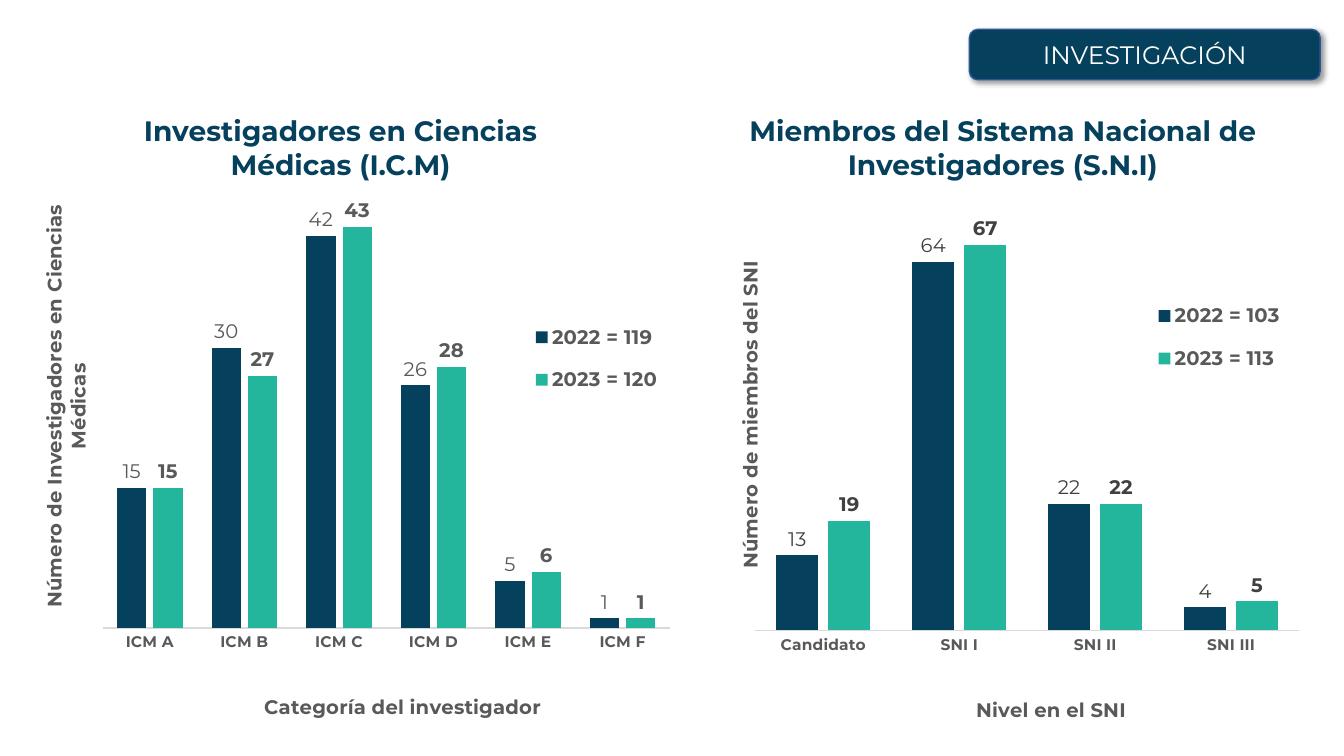
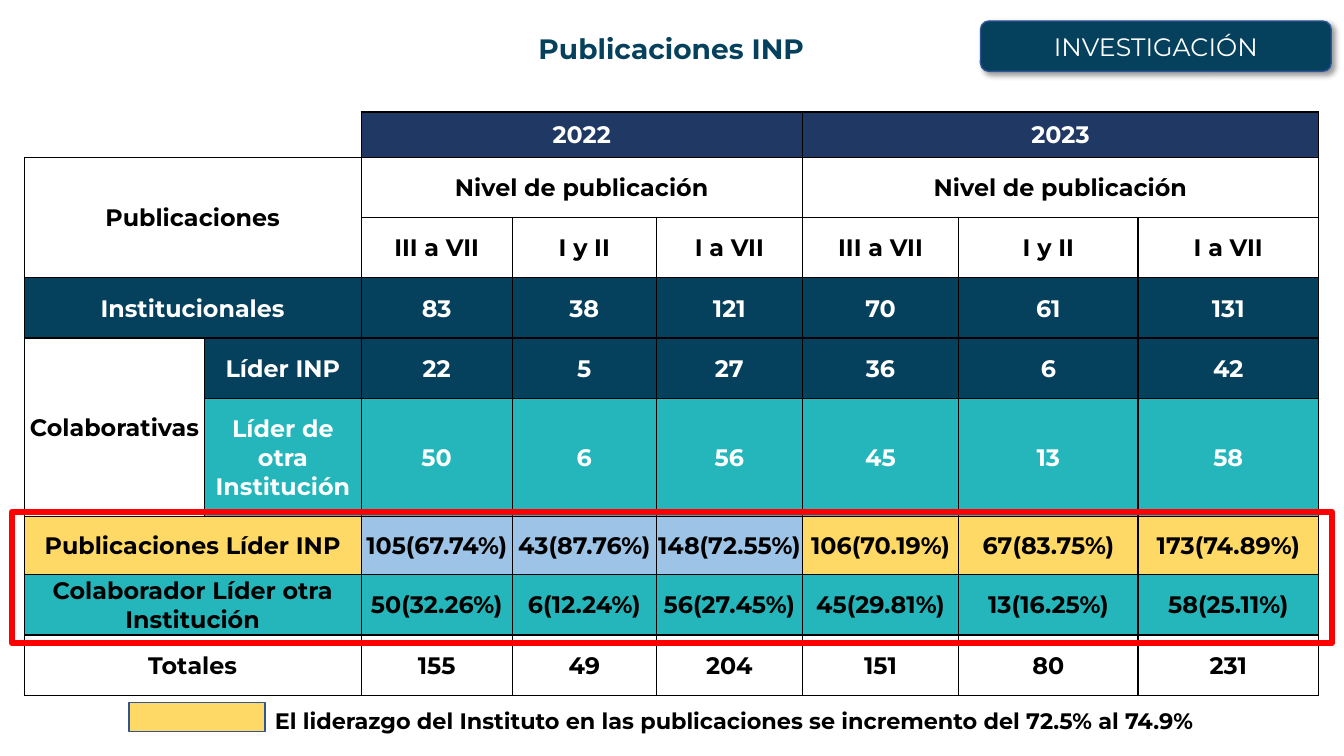
from lxml import etree
from pptx import Presentation
from pptx.chart.data import CategoryChartData
from pptx.dml.color import RGBColor
from pptx.enum import chart as ch, shapes, text
from pptx.oxml import parse_xml
from pptx.oxml.ns import nsdecls, qn
from pptx.util import Cm, Pt

FONT = "Montserrat"
NAVY, GREEN, TEAL = "05405D", "24B69C", "24B6BA"
INDIGO, YELLOW, SKY = "203864", "FFD966", "9DC3E6"
GREY, WHITE, BLACK = "595959", "FFFFFF", "000000"
rgb = RGBColor.from_string


def write(frame, words, size, colour, bold=True, align=text.PP_ALIGN.CENTER):
    frame.word_wrap = True
    paragraph = frame.paragraphs[0]
    paragraph.text = words
    paragraph.alignment = align
    for run in paragraph.runs:
        font = run.font
        font.name, font.size, font.bold = FONT, Pt(size), bold
        font.color.rgb = rgb(colour)


def add_badge(slide, left, top):
    """Section label with a soft shadow, in the top right corner."""
    badge = slide.shapes.add_shape(shapes.MSO_SHAPE.ROUNDED_RECTANGLE,
                                   Cm(left), Cm(top), Cm(8.84), Cm(1.27))
    badge.fill.solid()
    badge.fill.fore_color.rgb = rgb(NAVY)
    badge.line.color.rgb = rgb("2F5597")
    badge.line.width = Pt(1)
    badge.shadow.inherit = False
    effects = badge._element.spPr.find(qn("a:effectLst"))
    effects.append(parse_xml(
        f'<a:outerShdw {nsdecls("a")} blurRad="{Pt(4)}" dist="{Pt(3)}" dir="2700000" algn="tl">'
        f'<a:srgbClr val="{BLACK}"><a:alpha val="40000"/></a:srgbClr></a:outerShdw>'))
    badge.text_frame.vertical_anchor = text.MSO_ANCHOR.MIDDLE
    write(badge.text_frame, "INVESTIGACIÓN", 18, WHITE, bold=False)


prs = Presentation()
prs.slide_width, prs.slide_height = Cm(33.87), Cm(19.05)
blank = prs.slide_layouts[6]

# Researchers: two charts side by side
researchers = prs.slides.add_slide(blank)
for heading, left, width in (
        ("Investigadores en Ciencias Médicas (I.C.M)", 1.83, 13.51),
        ("Miembros del Sistema Nacional de Investigadores (S.N.I)", 17.25, 16.05)):
    box = researchers.shapes.add_textbox(Cm(left), Cm(2.74), Cm(width), Cm(1.96))
    write(box.text_frame, heading, 20, NAVY)
add_badge(researchers, 24.43, 0.74)

# Layouts are fractions of the chart: x, y and, where given, width and height
charts = [
    dict(left=0.3, width=16.94, top_value=45, label_colour=GREY,
         categories=["ICM A", "ICM B", "ICM C", "ICM D", "ICM E", "ICM F"],
         series={"2022 = 119": [15, 30, 42, 26, 5, 1],
                 "2023 = 120": [15, 27, 43, 28, 6, 1]},
         category_title="Categoría del investigador",
         value_title="Número de Investigadores en Ciencias Médicas",
         plot_at=(0.135, 0.097, 0.844, 0.692), legend_at=(0.76, 0.26, 0.22, 0.17),
         category_title_at=(0.37, 0.89), value_title_at=(0.037, 0.086)),
    dict(left=18.29, width=14.99, top_value=80, label_colour="404040",
         categories=["Candidato", "SNI I", "SNI II", "SNI III"],
         series={"2022 = 103": [13, 64, 22, 4],
                 "2023 = 113": [19, 67, 22, 5]},
         category_title="Nivel en el SNI",
         value_title="Número de miembros del SNI",
         plot_at=(0.05, 0.034, 0.914, 0.759), legend_at=(0.71, 0.225, 0.24, 0.17),
         category_title_at=(0.415, 0.895), value_title_at=(0.012, 0.178)),
]
for item in charts:
    data = CategoryChartData()
    data.categories = item["categories"]
    for name, values in item["series"].items():
        data.add_series(name, values)
    chart = researchers.shapes.add_chart(
        ch.XL_CHART_TYPE.COLUMN_CLUSTERED, Cm(item["left"]), Cm(3.76),
        Cm(item["width"]), Cm(15.29), data).chart
    chart.has_title = False
    chart.font.name, chart.font.size = FONT, Pt(11)
    chart.font.color.rgb = rgb(GREY)

    plot = chart.plots[0]
    plot.gap_width, plot.overlap, plot.vary_by_categories = 100, -24, False
    for series, colour, bold in zip(plot.series, (NAVY, GREEN), (False, True)):
        series.format.fill.solid()
        series.format.fill.fore_color.rgb = rgb(colour)
        labels = series.data_labels
        labels.show_value = True
        labels.position = ch.XL_LABEL_POSITION.OUTSIDE_END
        labels.font.name, labels.font.size, labels.font.bold = FONT, Pt(14), bold
        labels.font.color.rgb = rgb(item["label_colour"])

    categories, values = chart.category_axis, chart.value_axis
    categories.major_tick_mark = ch.XL_TICK_MARK.NONE
    categories.format.line.color.rgb = rgb("D9D9D9")
    categories.format.line.width = Pt(1)
    ticks = categories.tick_labels.font
    ticks.name, ticks.size, ticks.bold = FONT, Pt(11), True
    ticks.color.rgb = rgb(GREY)
    values.minimum_scale, values.maximum_scale = 0, item["top_value"]
    values.has_major_gridlines = False
    values.visible = False
    write(categories.axis_title.text_frame, item["category_title"], 14, GREY)
    write(values.axis_title.text_frame, item["value_title"], 14, GREY)
    value_title = values.axis_title._element
    turned = next(value_title.iter(qn("a:bodyPr")))
    turned.set("rot", "-5400000")
    turned.set("vert", "horz")

    chart.has_legend = True
    legend = chart.legend
    legend.position = ch.XL_LEGEND_POSITION.RIGHT
    legend.include_in_layout = False
    legend.font.name, legend.font.size, legend.font.bold = FONT, Pt(14), True
    legend.font.color.rgb = rgb(GREY)

    for part, follower, place in (
            (chart._chartSpace.chart.plotArea, "c:barChart", item["plot_at"]),
            (legend._element, "c:overlay", item["legend_at"]),
            (categories.axis_title._element, "c:overlay", item["category_title_at"]),
            (value_title, "c:overlay", item["value_title_at"])):
        for old in part.findall(qn("c:layout")):
            part.remove(old)
        layout = parse_xml(f'<c:layout {nsdecls("c")}><c:manualLayout/></c:layout>')
        settings = [("xMode", "edge"), ("yMode", "edge"), *zip("xywh", place)]
        if follower == "c:barChart":
            settings.insert(0, ("layoutTarget", "inner"))
        for tag, value in settings:
            etree.SubElement(layout[0], qn(f"c:{tag}")).set("val", str(value))
        part.find(qn(follower)).addprevious(layout)

# Publications: table with a highlighted pair of rows
publications = prs.slides.add_slide(blank)
heading = publications.shapes.add_textbox(Cm(5.16), Cm(0.66), Cm(23.52), Cm(1.1))
write(heading.text_frame, "Publicaciones INP", 20, NAVY)

levels = ["III a VII", "I y II", "I a VII"]
# Each row: height, text colour, fills of the eight columns, words
rows = [
    (1.14, WHITE, [WHITE] * 2 + [INDIGO] * 6, ["", "", "2022", "", "", "2023", "", ""]),
    (1.52, BLACK, [WHITE] * 8,
     ["Publicaciones", "", "Nivel de publicación", "", "", "Nivel de publicación", "", ""]),
    (1.52, BLACK, [WHITE] * 8, ["", "", *levels, *levels]),
    (1.52, WHITE, [NAVY] * 8, ["Institucionales", "", "83", "38", "121", "70", "61", "131"]),
    (1.52, WHITE, [WHITE] + [NAVY] * 7,
     ["Colaborativas", "Líder INP", "22", "5", "27", "36", "6", "42"]),
    (2.97, WHITE, [WHITE] + [TEAL] * 7,
     ["", "Líder de otra Institución", "50", "6", "56", "45", "13", "58"]),
    (1.47, BLACK, [YELLOW] * 2 + [SKY] * 3 + [YELLOW] * 3,
     ["Publicaciones Líder INP", "", "105(67.74%)", "43(87.76%)", "148(72.55%)",
      "106(70.19%)", "67(83.75%)", "173(74.89%)"]),
    (1.52, BLACK, [TEAL] * 8,
     ["Colaborador Líder otra Institución", "", "50(32.26%)", "6(12.24%)", "56(27.45%)",
      "45(29.81%)", "13(16.25%)", "58(25.11%)"]),
    (1.52, BLACK, [WHITE] * 8, ["Totales", "", "155", "49", "204", "151", "80", "231"]),
]
widths = [4.55, 3.94, 3.81, 3.63, 3.68, 3.94, 4.52, 4.55]
table = publications.shapes.add_table(
    len(rows), len(widths), Cm(0.61), Cm(2.82), Cm(sum(widths)),
    Cm(sum(row[0] for row in rows))).table
table.first_row = table.horz_banding = False
for column, width in zip(table.columns, widths):
    column.width = Cm(width)

open_corner = {(0, 0): "B", (0, 1): "RB"}
for r, (height, colour, fills, words) in enumerate(rows):
    table.rows[r].height = Cm(height)
    for c, (fill, word) in enumerate(zip(fills, words)):
        cell = table.cell(r, c)
        cell.fill.solid()
        cell.fill.fore_color.rgb = rgb(fill)
        cell.margin_left = cell.margin_right = cell.margin_top = Cm(0.03)
        cell.margin_bottom = 0
        cell.vertical_anchor = text.MSO_ANCHOR.MIDDLE
        if word:
            write(cell.text_frame, word, 17, BLACK if fill == WHITE else colour)
        for place, side in enumerate(open_corner.get((r, c), "LRTB")):
            cell._tc.get_or_add_tcPr().insert(place, parse_xml(
                f'<a:ln{side} {nsdecls("a")} w="{Pt(1)}"><a:solidFill>'
                f'<a:srgbClr val="{BLACK}"/></a:solidFill></a:ln{side}>'))

merges = [(0, 2, 0, 4), (0, 5, 0, 7), (1, 2, 1, 4), (1, 5, 1, 7), (1, 0, 2, 1), (4, 0, 5, 0)]
merges += [(r, 0, r, 1) for r in (3, 6, 7, 8)]
for top, left, bottom, right in merges:
    table.cell(top, left).merge(table.cell(bottom, right))

key = publications.shapes.add_shape(shapes.MSO_SHAPE.RECTANGLE,
                                    Cm(3.25), Cm(17.7), Cm(3.43), Cm(0.74))
key.fill.solid()
key.fill.fore_color.rgb = rgb(YELLOW)
highlight = publications.shapes.add_shape(shapes.MSO_SHAPE.RECTANGLE,
                                          Cm(0.3), Cm(12.9), Cm(33.27), Cm(3.3))
highlight.fill.background()
for outlined, colour, weight in ((key, "325491", 1), (highlight, "FF0000", 4.5)):
    outlined.shadow.inherit = False
    outlined.line.color.rgb = rgb(colour)
    outlined.line.width = Pt(weight)

conclusion = publications.shapes.add_textbox(Cm(6.68), Cm(17.7), Cm(26.7), Cm(0.94))
write(conclusion.text_frame,
      "El liderazgo del Instituto en las publicaciones se incremento del 72.5% al 74.9%",
      16, BLACK, align=text.PP_ALIGN.LEFT)
add_badge(publications, 24.71, 0.53)

prs.save("out.pptx")
